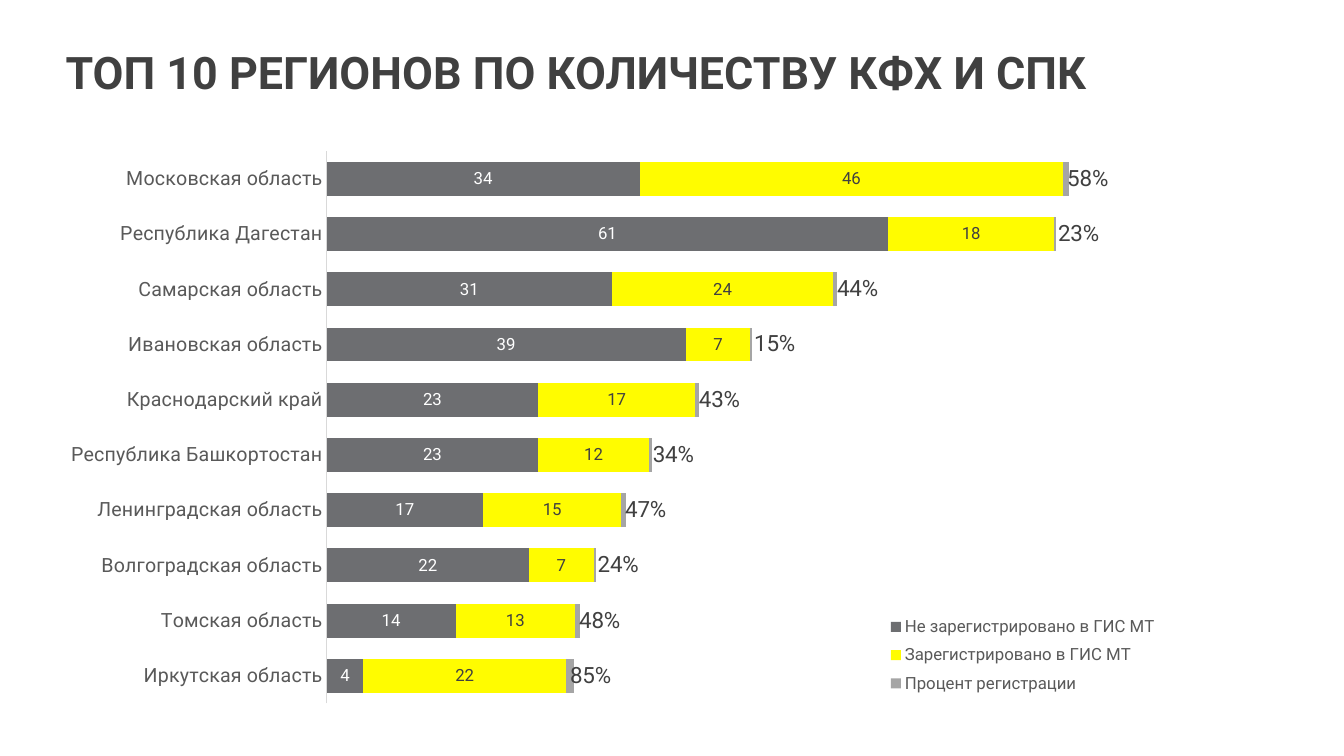
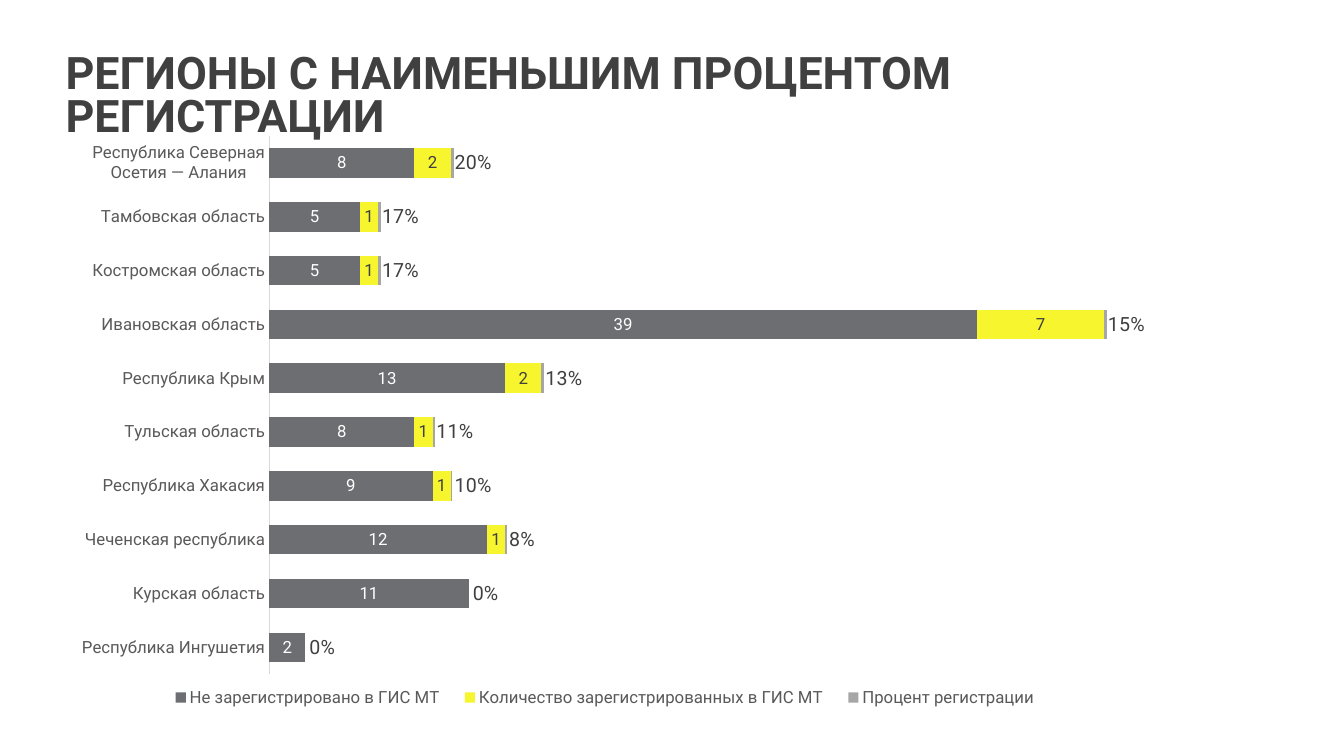
from lxml import etree
from pptx import Presentation
from pptx.chart.data import CategoryChartData
from pptx.dml.color import RGBColor
from pptx.enum.chart import (XL_CHART_TYPE, XL_LABEL_POSITION,
                             XL_LEGEND_POSITION, XL_TICK_MARK)
from pptx.enum.text import MSO_ANCHOR, MSO_AUTO_SIZE, PP_ALIGN
from pptx.oxml.ns import qn
from pptx.util import Inches, Pt

BARS = XL_CHART_TYPE.BAR_STACKED
CENTER, BASE = XL_LABEL_POSITION.CENTER, XL_LABEL_POSITION.INSIDE_BASE
RIGHT, BOTTOM = XL_LEGEND_POSITION.RIGHT, XL_LEGEND_POSITION.BOTTOM
NO_TICK = XL_TICK_MARK.NONE

FONT = "Roboto"
DARK, TEXT, RULE, WHITE, GRAY = "404040", "595959", "D9D9D9", "FFFFFF", "6D6E71"
TITLE_ONLY = 5

# Rows run from the bottom bar to the top one.
TOP_ROWS = [
    ("Иркутская область", 4, 22, 0.85),
    ("Томская область", 14, 13, 0.48),
    ("Волгоградская область", 22, 7, 0.24),
    ("Ленинградская область", 17, 15, 0.47),
    ("Республика Башкортостан", 23, 12, 0.34),
    ("Краснодарский край", 23, 17, 0.43),
    ("Ивановская область", 39, 7, 0.15),
    ("Самарская область", 31, 24, 0.44),
    ("Республика Дагестан", 61, 18, 0.23),
    ("Московская область", 34, 46, 0.58),
]
LOW_ROWS = [
    ("Республика Ингушетия", 2, 0, 0),
    ("Курская область", 11, 0, 0),
    ("Чеченская республика", 12, 1, 0.08),
    ("Республика Хакасия", 9, 1, 0.1),
    ("Тульская область", 8, 1, 0.11),
    ("Республика Крым", 13, 2, 0.13),
    ("Ивановская область", 39, 7, 0.15),
    ("Костромская область", 5, 1, 0.17),
    ("Тамбовская область", 5, 1, 0.17),
    ("Республика Северная Осетия — Алания", 8, 2, 0.2),
]


def color(value):
    return RGBColor.from_string(value)


def style(font, size, shade, bold=False):
    font.name, font.size, font.bold = FONT, Pt(size), bold
    font.color.rgb = color(shade)


def add_title(slide, text):
    title = slide.shapes.title
    title.left, title.top = Inches(0.55), Inches(0.5)
    title.width, title.height = Inches(11.32), Inches(0.54)
    frame = title.text_frame
    frame.text = text
    frame.word_wrap = True
    frame.vertical_anchor = MSO_ANCHOR.TOP
    frame.auto_size = MSO_AUTO_SIZE.SHAPE_TO_FIT_TEXT
    line = frame.paragraphs[0]
    line.alignment, line.line_spacing = PP_ALIGN.LEFT, 0.8
    style(line.runs[0].font, 32, DARK, True)
    # The title lies above the chart.
    slide.shapes._spTree.append(title._element)


def set_layout(part, frame, area, inner=False):
    """Place a chart part at area (left, top, width, height on the slide)."""
    for old in part.findall(qn("c:layout")):
        part.remove(old)
    layout = etree.Element(qn("c:layout"))
    manual = etree.SubElement(layout, qn("c:manualLayout"))
    left, top, width, height = frame
    x, y, w, h = area
    items = [("layoutTarget", "inner")] if inner else []
    items += [("xMode", "edge"), ("yMode", "edge"),
              ("x", (x - left) / width), ("y", (y - top) / height),
              ("w", w / width), ("h", h / height)]
    for tag, value in items:
        etree.SubElement(manual, qn("c:" + tag)).set("val", str(value))
    part.insert(len(part.findall(qn("c:legendPos"))), layout)


def format_series(series, fill, size, shade, number, place):
    series.format.fill.solid()
    series.format.fill.fore_color.rgb = color(fill)
    labels = series.data_labels
    labels.show_value = True
    labels.number_format, labels.number_format_is_linked = number, False
    labels.position = place
    style(labels.font, size, shade)


def format_axes(chart, size, limit):
    regions, values = chart.category_axis, chart.value_axis
    regions.major_tick_mark = regions.minor_tick_mark = NO_TICK
    regions.format.line.color.rgb = color(RULE)
    regions.format.line.width = Pt(0.75)
    style(regions.tick_labels.font, size, TEXT)
    values.minimum_scale, values.maximum_scale = 0, limit
    values.has_major_gridlines = False
    values.visible = False


def add_bars(slide, rows, known, fills, frame, plot, key, side, gap, limit,
             size, share):
    """Add stacked bars; size and share are the region and percent text sizes."""
    names, missing, done, rates = zip(*rows)
    data = CategoryChartData()
    data.categories = names
    data.add_series("Не зарегистрировано в ГИС МТ", missing)
    data.add_series(known, done)
    data.add_series("Процент регистрации", rates, "0%")
    box = [Inches(n) for n in frame]
    chart = slide.shapes.add_chart(BARS, *box, data).chart
    chart.has_title = False
    style(chart.font, 12, TEXT)
    format_axes(chart, size, limit)

    bars = chart.plots[0]
    bars.gap_width, bars.overlap, bars.vary_by_categories = gap, 100, False
    looks = [(GRAY, 12, WHITE, "0", CENTER),
             (fills[0], 12, DARK, "0;;", CENTER),
             (fills[1], share, DARK, "0%", BASE)]
    for series, look in zip(bars.series, looks):
        format_series(series, *look)

    chart.has_legend = True
    legend = chart.legend
    legend.position, legend.include_in_layout = side, False
    style(legend.font, 12, TEXT)
    set_layout(legend._element, frame, key)
    area = chart._chartSpace.find(".//" + qn("c:plotArea"))
    set_layout(area, frame, plot, True)


def main():
    deck = Presentation()
    deck.slide_width, deck.slide_height = Inches(13.33), Inches(7.5)
    layout = deck.slide_layouts[TITLE_ONLY]

    top = deck.slides.add_slide(layout)
    add_bars(top, TOP_ROWS, "Зарегистрировано в ГИС МТ",
             ("FFFC00", "A5A5A5"), frame=(0.5, 1.37, 11.06, 5.75),
             plot=(3.24, 1.5, 8.22, 5.48), key=(8.78, 6.04, 2.73, 0.92),
             side=RIGHT, gap=63, limit=90, size=14, share=16)
    add_title(top, "ТОП 10 РЕГИОНОВ ПО КОЛИЧЕСТВУ КФХ И СПК")

    low = deck.slides.add_slide(layout)
    add_bars(low, LOW_ROWS, "Количество зарегистрированных в ГИС МТ",
             ("F6F52E", "A6A6A6"), frame=(0.59, 1.23, 11.32, 5.93),
             plot=(2.67, 1.35, 9, 5.34), key=(1.55, 6.77, 8.9, 0.3),
             side=BOTTOM, gap=82, limit=50, size=12, share=14)
    add_title(low, "РЕГИОНЫ С НАИМЕНЬШИМ ПРОЦЕНТОМ РЕГИСТРАЦИИ")

    deck.save("out.pptx")


if __name__ == "__main__":
    main()
